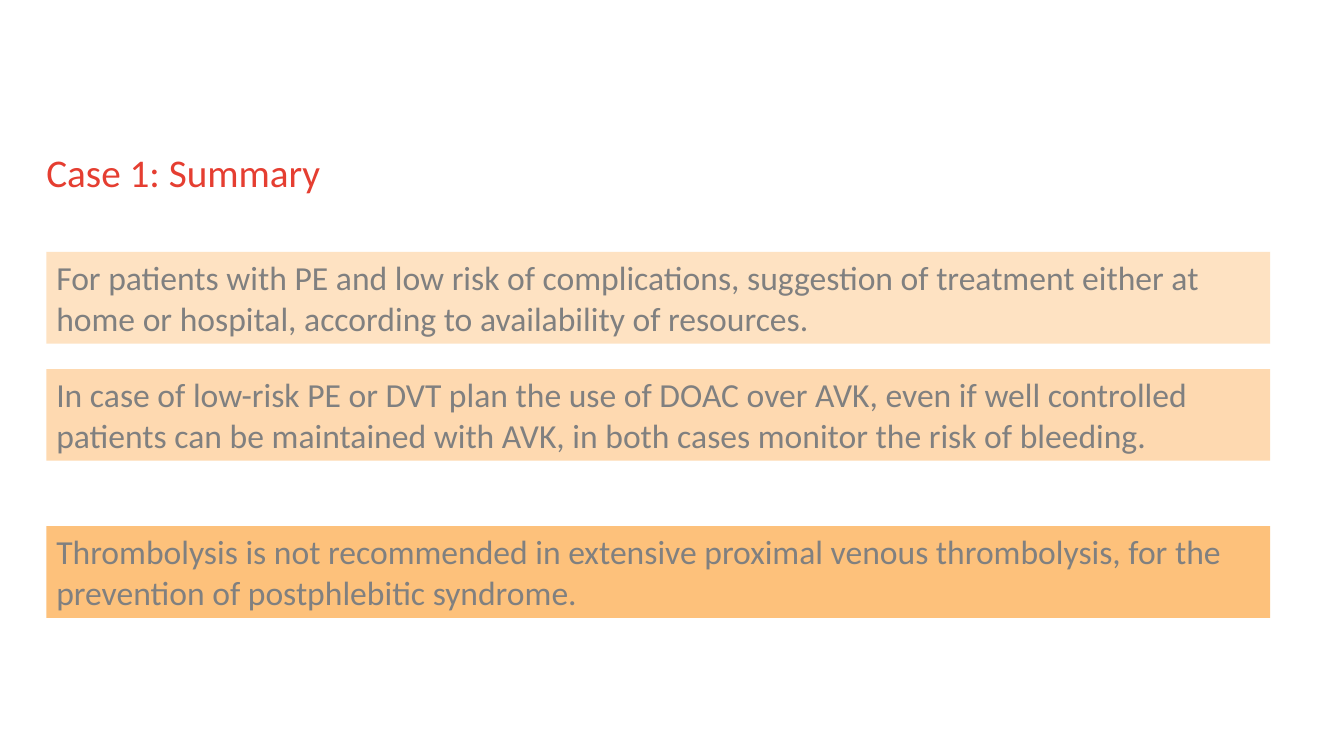
"""Build the summary slide for case 1 with three shaded recommendations."""
from lxml import etree
from pptx import Presentation
from pptx.dml.color import RGBColor
from pptx.enum import shapes, text
from pptx.oxml import ns
from pptx.util import Cm, Pt

RED = RGBColor(0xE5, 0x3E, 0x31)
GREY = RGBColor(0x80, 0x80, 0x80)
PEACH = RGBColor(0xFE, 0xD9, 0xB0)
ORANGE = RGBColor(0xFD, 0xC1, 0x7B)

TITLE = "Case 1: Summary"
RECOMMENDATIONS = [
    {"top": 6.35, "color": PEACH, "opacity": 76,
     "words": "For patients with PE and low risk of complications, suggestion of treatment "
              "either at home or hospital, according to availability of resources."},
    {"top": 9.3, "color": PEACH, "opacity": 100,
     "words": "In case of low-risk PE or DVT plan the use of DOAC over AVK, even if well "
              "controlled patients can be maintained with AVK, in both cases monitor the "
              "risk of bleeding."},
    {"top": 13.26, "color": ORANGE, "opacity": 100,
     "words": "Thrombolysis is not recommended in extensive proximal venous thrombolysis, "
              "for the prevention of postphlebitic syndrome."},
]
LEFT = Cm(1.17)
BAR_WIDTH, BAR_HEIGHT = Cm(30.84), Cm(2.31)


def write(shape, words, *, size, color, inset_x=Cm(0.25), inset_y=Cm(0.13)):
    frame = shape.text_frame
    frame.word_wrap = True
    frame.vertical_anchor = text.MSO_ANCHOR.TOP
    frame.margin_left = frame.margin_right = inset_x
    frame.margin_top = frame.margin_bottom = inset_y
    paragraph = frame.paragraphs[0]
    paragraph.alignment = text.PP_ALIGN.LEFT
    run = paragraph.add_run()
    run.text = words
    run.font.name = "Calibri"
    run.font.size = Pt(size)
    run.font.color.rgb = color


def add_bar(slide, top, color, opacity, words):
    bar = slide.shapes.add_shape(
        shapes.MSO_SHAPE.RECTANGLE, LEFT, Cm(top), BAR_WIDTH, BAR_HEIGHT)
    bar.shadow.inherit = False
    bar.line.fill.background()
    bar.fill.solid()
    bar.fill.fore_color.rgb = color
    if opacity < 100:
        fill_color = bar.fill._xPr.find(ns.qn("a:solidFill"))[0]
        etree.SubElement(fill_color, ns.qn("a:alpha"), val=str(opacity * 1000))
    write(bar, words, size=24, color=GREY)
    bar.text_frame.auto_size = text.MSO_AUTO_SIZE.SHAPE_TO_FIT_TEXT


def main():
    presentation = Presentation()
    presentation.slide_width, presentation.slide_height = Cm(33.87), Cm(19.05)
    slide = presentation.slides.add_slide(presentation.slide_layouts[6])
    title = slide.shapes.add_textbox(LEFT, Cm(3.73), Cm(30.48), Cm(1.98))
    write(title, TITLE, size=28, color=RED, inset_x=0, inset_y=0)
    for recommendation in RECOMMENDATIONS:
        add_bar(slide, **recommendation)
    presentation.save("out.pptx")


if __name__ == "__main__":
    main()
